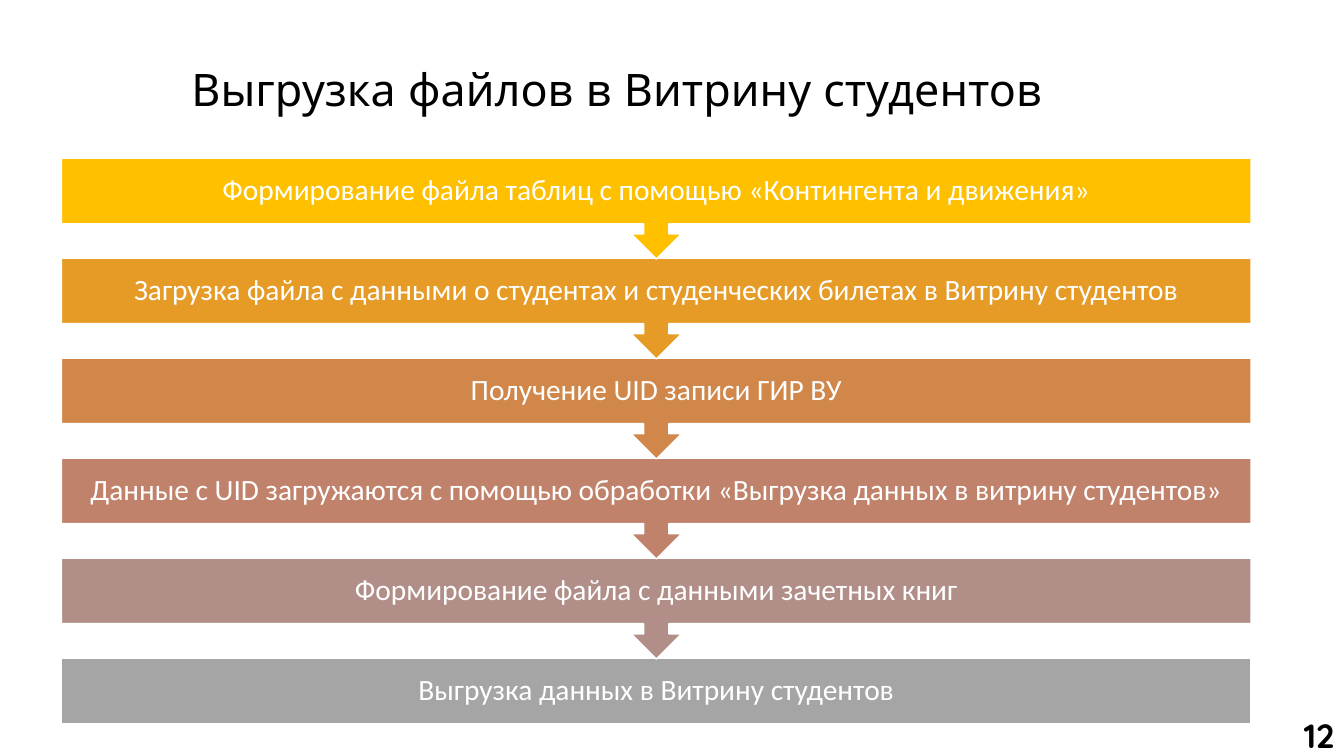
from pptx import Presentation
from pptx.dml.color import RGBColor
from pptx.enum.shapes import MSO_SHAPE
from pptx.enum.text import MSO_ANCHOR, PP_ALIGN
from pptx.util import Inches, Pt

COLORS = {"text": "000000", "white": "FFFFFF"}
STEPS = [
    ("Формирование файла таблиц с помощью «Контингента и движения»", "FFC000"),
    ("Загрузка файла с данными о студентах и студенческих билетах в Витрину студентов", "E59B26"),
    ("Получение UID записи ГИР ВУ", "D08749"),
    ("Данные с UID загружаются с помощью обработки «Выгрузка данных в витрину студентов»", "C1826B"),
    ("Формирование файла с данными зачетных книг", "B18F88"),
    ("Выгрузка данных в Витрину студентов", "A5A5A5"),
]
TITLE_FORMAT = {"name": "Quicksand", "size": Pt(32)}
STEP_FORMAT = {"name": "Calibri", "size": Pt(21)}
NUMBER_FORMAT = {"name": "Quicksand", "size": Pt(24), "bold": True}


def write_text(shape, text, color, font_format, alignment, spacing=1.0):
    paragraph = shape.text_frame.paragraphs[0]
    paragraph.text = text
    paragraph.alignment = alignment
    paragraph.line_spacing = spacing
    for name, value in font_format.items():
        setattr(paragraph.font, name, value)
    paragraph.font.color.rgb = RGBColor.from_string(color)


def add_label(slide, box, text, font_format, alignment, anchor, spacing=1.0):
    shape = slide.shapes.add_textbox(*map(Inches, box))
    shape.text_frame.word_wrap = True
    shape.text_frame.vertical_anchor = anchor
    write_text(shape, text, COLORS["text"], font_format, alignment, spacing)


def add_step(slide, kind, box, text, fill):
    shape = slide.shapes.add_shape(kind, *map(Inches, box))
    shape.shadow.inherit = False
    shape.fill.solid()
    shape.fill.fore_color.rgb = RGBColor.from_string(fill)
    shape.line.color.rgb = RGBColor.from_string(COLORS["white"])
    shape.line.width = Pt(1)
    frame = shape.text_frame
    frame.word_wrap = True
    frame.vertical_anchor = MSO_ANCHOR.MIDDLE
    for side in ("left", "top", "right", "bottom"):
        setattr(frame, f"margin_{side}", Inches(0.16))
    write_text(shape, text, COLORS["white"], STEP_FORMAT, PP_ALIGN.CENTER, 0.9)


def add_process(slide, box):
    """Stack the steps; each arrow reaches the top of the next step."""
    left, top, width, height = box
    bar = 0.65
    pitch = (height - bar) / (len(STEPS) - 1)
    last = len(STEPS) - 1
    # Lower steps go in first, so the arrows lie over them
    for row in reversed(range(len(STEPS))):
        kind = MSO_SHAPE.RECTANGLE if row == last else MSO_SHAPE.DOWN_ARROW_CALLOUT
        step_height = bar if row == last else 1
        add_step(slide, kind, (left, top + row * pitch, width, step_height), *STEPS[row])


def main():
    presentation = Presentation()
    presentation.slide_width = Inches(13.33)
    presentation.slide_height = Inches(7.5)
    slide = presentation.slides.add_slide(presentation.slide_layouts[6])

    # Title
    add_label(slide, (1.8, 0.19, 10.63, 1.45), "Выгрузка файлов в Витрину студентов",
              TITLE_FORMAT, PP_ALIGN.LEFT, MSO_ANCHOR.MIDDLE, 0.9)
    # Process
    add_process(slide, (0.61, 1.57, 11.8, 5.61))
    # Slide number
    add_label(slide, (12.28, 7.04, 1.05, 0.51), "12",
              NUMBER_FORMAT, PP_ALIGN.RIGHT, MSO_ANCHOR.TOP)
    presentation.save("out.pptx")


if __name__ == "__main__":
    main()
